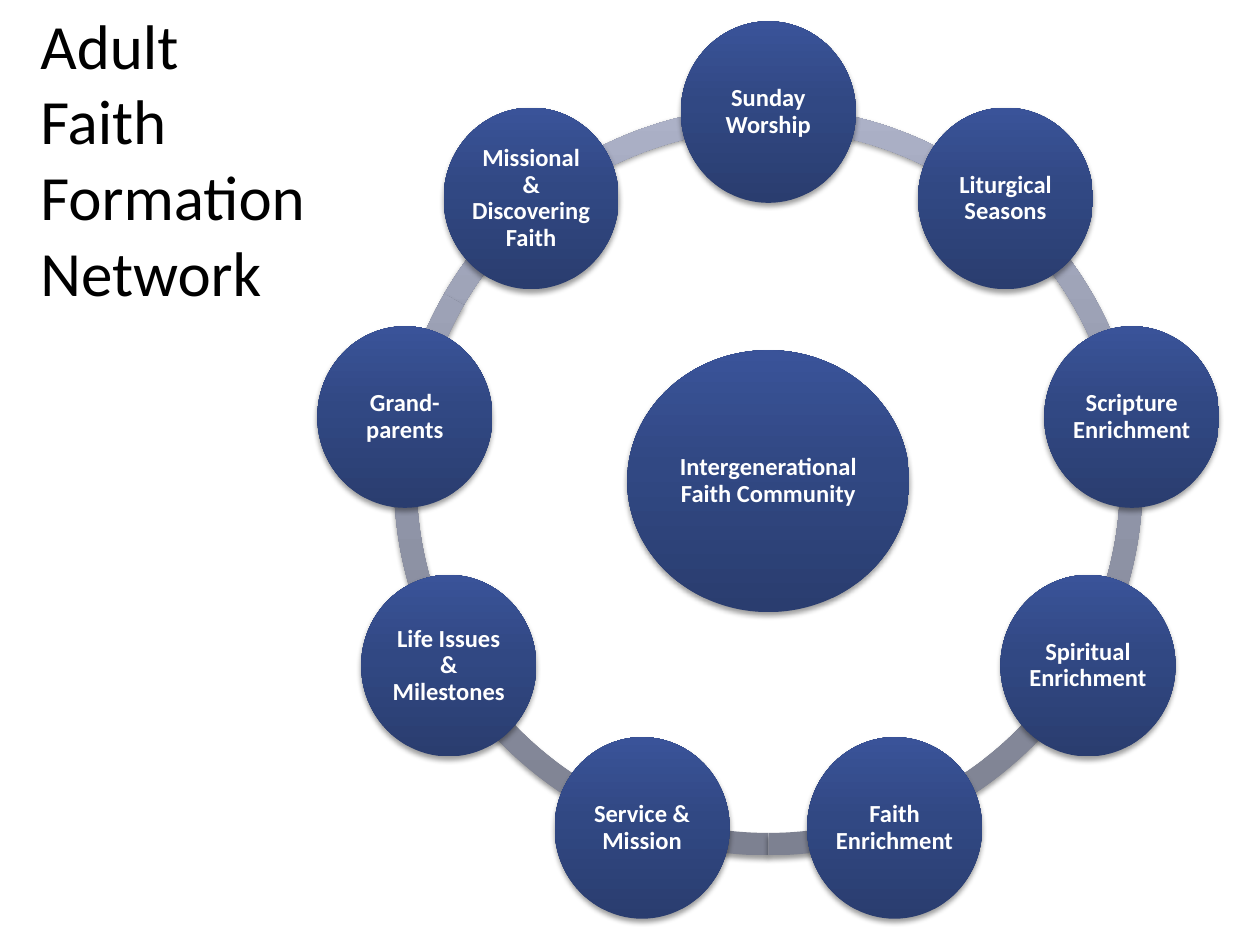
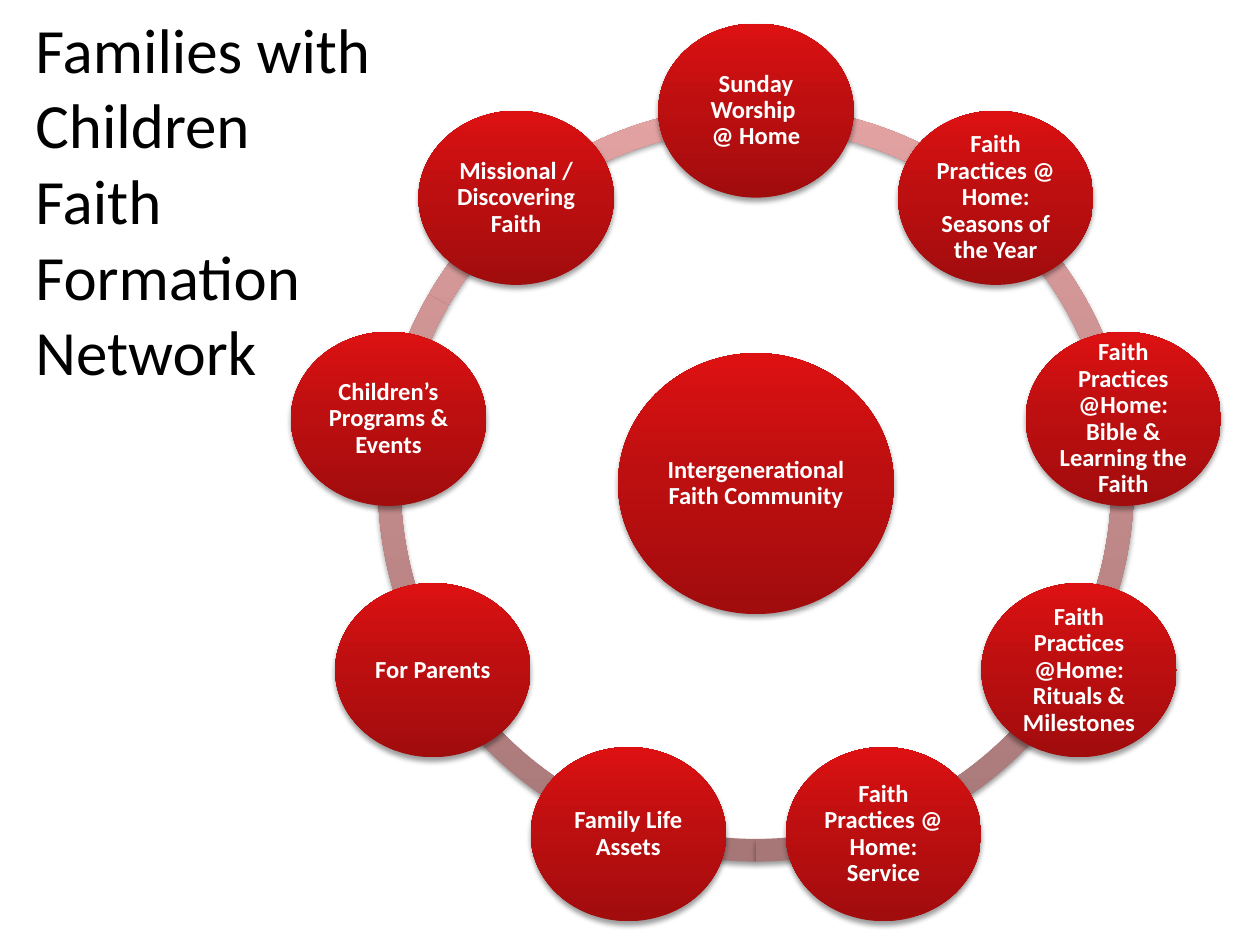
import copy
import math
from dataclasses import dataclass

from lxml import etree
from pptx import Presentation
from pptx import util as u
from pptx.dml import color
from pptx.enum import shapes, text
from pptx.oxml import ns

Cm = u.Cm


@dataclass(frozen=True)
class Theme:
    font: str = "Calibri"
    ink: str = "000000"
    paper: str = "FFFFFF"
    shade: str = "000000"
    head: int = 36
    label: int = 14
    blue: tuple = ("2A3D6F", "314883", "3A5399")
    slate: tuple = ("7D8191", "9398AB", "ACB1C7")
    red: tuple = ("A10C0D", "BE0F10", "DD1112")
    rose: tuple = ("A77777", "C48C8C", "E4A3A3")


class Deck:
    def __init__(self, theme):
        self.theme = theme
        self.file = Presentation()
        self.file.slide_width, self.file.slide_height = Cm(25.4), Cm(19.05)
        self.slide = None

    def page(self):
        self.slide = self.file.slides.add_slide(self.file.slide_layouts[5])

    def style(self, frame, size, tint, align, bold=False):
        for para in frame.paragraphs:
            para.alignment = align
            for run in para.runs:
                run.font.name = self.theme.font
                run.font.size = u.Pt(size)
                run.font.bold = bold
                run.font.color.rgb = color.RGBColor.from_string(tint)

    def title(self, words, box):
        shape = self.slide.shapes.title
        shape.left, shape.top, shape.width, shape.height = map(Cm, box)
        frame = shape.text_frame
        frame.text = words
        frame.word_wrap = True
        frame.auto_size = text.MSO_AUTO_SIZE.NONE
        frame.vertical_anchor = text.MSO_ANCHOR.TOP
        self.style(frame, self.theme.head, self.theme.ink, text.PP_ALIGN.LEFT)

    def shape(self, kind, mid, size, tints):
        (x, y), (wide, high) = mid, size
        shape = self.slide.shapes.add_shape(
            kind, Cm(x - wide / 2), Cm(y - high / 2), Cm(wide), Cm(high))
        shape.line.fill.background()
        self.blend(shape, tints)
        self.shadow(shape)
        return shape

    def blend(self, shape, tints):
        fill = shape.fill
        fill.gradient()
        fill.gradient_angle = 90
        stops = shape._element.spPr.find(".//" + ns.qn("a:gsLst"))
        stops.insert(1, copy.deepcopy(stops[0]))
        for stop, place, tint in zip(fill.gradient_stops, (0, 0.55, 1), tints):
            stop.position = place
            stop.color.rgb = color.RGBColor.from_string(tint)

    def shadow(self, shape):
        shape.shadow.inherit = False
        effects = shape._element.spPr.find(ns.qn("a:effectLst"))
        outer = etree.SubElement(
            effects, ns.qn("a:outerShdw"), blurRad=str(u.Pt(3.1)),
            dist=str(u.Pt(2)), dir="5400000", rotWithShape="0")
        tint = etree.SubElement(outer, ns.qn("a:srgbClr"), val=self.theme.shade)
        etree.SubElement(tint, ns.qn("a:alpha"), val="38000")

    def arc(self, mid, size, start, stop, tints):
        shape = self.shape(shapes.MSO_SHAPE.BLOCK_ARC, mid, (size, size), tints)
        for i, value in enumerate((start * 0.6, stop * 0.6, 0.03)):
            shape.adjustments[i] = value

    def disc(self, words, mid, size, tints):
        shape = self.shape(shapes.MSO_SHAPE.OVAL, mid, size, tints)
        frame = shape.text_frame
        frame.text = words
        frame.word_wrap = True
        frame.vertical_anchor = text.MSO_ANCHOR.MIDDLE
        frame.margin_left = frame.margin_right = Cm(0.05)
        frame.margin_top = frame.margin_bottom = Cm(0.05)
        frame.paragraphs[0].line_spacing = 0.9
        self.style(frame, self.theme.label, self.theme.paper,
                   text.PP_ALIGN.CENTER, True)

    def wheel(self, names, mid, ring, reach, hub, node, tints, band):
        first, step, count = 18, 24, len(names)
        for i in reversed(range(count)):
            start = first + i * step
            stop = start + step if i < count - 1 else first
            self.arc(mid, ring, start, stop, band)
        self.disc("Intergenerational Faith Community", mid, hub, tints)
        for i, name in enumerate(names):
            turn = math.tau * i / count
            spot = (mid[0] + reach * math.sin(turn),
                    mid[1] - reach * math.cos(turn))
            self.disc(name, spot, node, tints)


ADULTS = [
    "Sunday Worship",
    "Liturgical Seasons",
    "Scripture Enrichment",
    "Spiritual Enrichment",
    "Faith Enrichment",
    "Service & Mission",
    "Life Issues & Milestones",
    "Grand-parents",
    "Missional & Discovering Faith",
]
HOMES = [
    "Sunday Worship \v@ Home",
    "Faith Practices @ Home: Seasons of the Year",
    "Faith Practices @Home: Bible & Learning the Faith",
    "Faith Practices @Home: Rituals & Milestones",
    "Faith Practices @ Home: Service",
    "Family Life Assets",
    "For Parents",
    "Children’s Programs & Events",
    "Missional / Discovering Faith",
]


def main():
    theme = Theme()
    deck = Deck(theme)

    deck.page()
    deck.title("Adult\nFaith Formation\nNetwork", (0.56, 0, 7.59, 6.4))
    deck.wheel(ADULTS, mid=(15.49, 9.7), ring=15.09, reach=7.44,
               hub=(5.69, 5.28), node=(3.53, 3.66),
               tints=theme.blue, band=theme.slate)

    deck.page()
    deck.title("Families with Children\nFaith\nFormation\nNetwork",
               (0.46, 0.08, 8.26, 7.95))
    deck.wheel(HOMES, mid=(15.24, 9.75), ring=15.24, reach=7.52,
               hub=(5.56, 5.26), node=(3.94, 3.51),
               tints=theme.red, band=theme.rose)

    deck.file.save("out.pptx")


if __name__ == "__main__":
    main()
